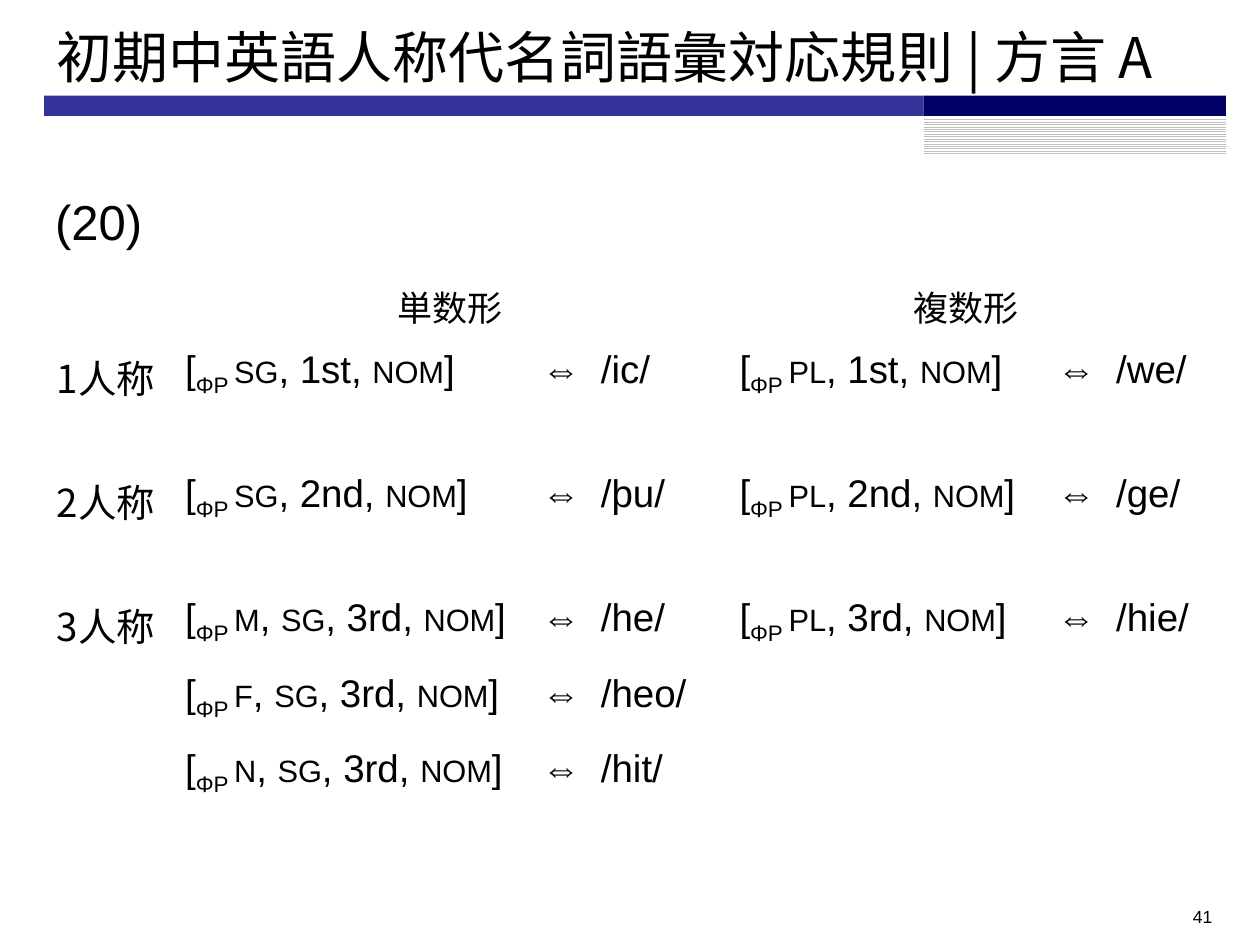
from pptx import Presentation
from pptx.dml.color import RGBColor
from pptx.enum.dml import MSO_PATTERN
from pptx.enum.shapes import MSO_SHAPE as Shape
from pptx.enum.text import MSO_ANCHOR as Anchor, MSO_AUTO_SIZE as AutoSize, PP_ALIGN as Align
from pptx.oxml.ns import qn
from pptx.util import Inches, Pt

LATIN, JAPANESE = "Arial", "Noto Sans CJK JP"
COLUMN_WIDTHS = [1.02, 2.83, 0.47, 1.1, 2.52, 0.47, 0.8]
ROW_HEIGHTS = [0.54, 0.69, 0.6, 0.6, 0.6, 0.6]
NUMBER_HEADINGS = {1: "単数形", 4: "複数形"}
PERSON_HEADINGS = {1: "1人称", 2: "2人称", 3: "3人称"}
RULES = {
    1: [
        (["sg", "1st", "nom"], "/ic/"),
        (["sg", "2nd", "nom"], "/þu/"),
        (["m", "sg", "3rd", "nom"], "/he/"),
        (["f", "sg", "3rd", "nom"], "/heo/"),
        (["n", "sg", "3rd", "nom"], "/hit/"),
    ],
    4: [
        (["pl", "1st", "nom"], "/we/"),
        (["pl", "2nd", "nom"], "/ge/"),
        (["pl", "3rd", "nom"], "/hie/"),
    ],
}


def color(value):
    return RGBColor.from_string(value)


def write(frame, text, size=22, font=LATIN, align=Align.LEFT, small_caps=False, baseline=0):
    paragraph = frame.paragraphs[0]
    paragraph.alignment = align
    run = paragraph.add_run()
    run.text = text
    run.font.size = Pt(size)
    run.font.name = font
    run.font.color.rgb = color("000000")
    properties = run.font._element
    east_asian = properties.makeelement(qn("a:ea"), {"typeface": font})
    properties.find(qn("a:latin")).addnext(east_asian)
    if small_caps:
        properties.set("cap", "small")
    if baseline:
        properties.set("baseline", str(baseline * 1000))


def write_features(frame, features):
    write(frame, "[")
    write(frame, "ΦP ", baseline=-25)
    for index, feature in enumerate(features):
        if index:
            write(frame, ", ")
        write(frame, feature, small_caps=feature.isalpha())
    write(frame, "]")


def add_bar(slide, left, top, width, height, fill):
    bar = slide.shapes.add_shape(
        Shape.RECTANGLE, Inches(left), Inches(top), Inches(width), Inches(height))
    bar.shadow.inherit = False
    bar.line.fill.background()
    bar.fill.solid()
    bar.fill.fore_color.rgb = color(fill)
    return bar


def add_title_bars(slide, left, top, width, height):
    accent_width = 2.4
    accent_left = left + width - accent_width
    add_bar(slide, left, top, width - accent_width, height, "333399")
    stripes = add_bar(slide, accent_left, top + 0.17, accent_width, 0.3, "FFFFFF")
    stripes.fill.patterned()
    stripes.fill.pattern = MSO_PATTERN.LIGHT_HORIZONTAL
    stripes.fill.fore_color.rgb = color("C0C0C0")
    stripes.fill.back_color.rgb = color("FFFFFF")
    add_bar(slide, accent_left, top, accent_width, height, "000066")


def place_title(slide, text, left, top, width, height):
    title = slide.shapes.title
    title.left, title.top = Inches(left), Inches(top)
    title.width, title.height = Inches(width), Inches(height)
    title.text_frame.auto_size = AutoSize.NONE
    title.text_frame.vertical_anchor = Anchor.MIDDLE
    write(title.text_frame, text, size=32, font=JAPANESE)


def add_label(slide, text, left, top, width, height, **text_format):
    label = slide.shapes.add_textbox(Inches(left), Inches(top), Inches(width), Inches(height))
    label.text_frame.word_wrap = True
    write(label.text_frame, text, **text_format)


def add_rule_table(slide, left, top, width, height):
    table = slide.shapes.add_table(
        len(ROW_HEIGHTS), len(COLUMN_WIDTHS),
        Inches(left), Inches(top), Inches(width), Inches(height)).table
    table.first_row = table.horz_banding = False
    for column, column_width in zip(table.columns, COLUMN_WIDTHS):
        column.width = Inches(column_width)
    for row, row_height in zip(table.rows, ROW_HEIGHTS):
        row.height = Inches(row_height)
    for cell in table.iter_cells():
        cell.fill.background()

    for column, heading in NUMBER_HEADINGS.items():
        table.cell(0, column).merge(table.cell(0, column + 2))
        write(table.cell(0, column).text_frame, heading,
              size=20, font=JAPANESE, align=Align.CENTER)
    for column in (0, 4, 5, 6):
        table.cell(3, column).merge(table.cell(5, column))
    for row, heading in PERSON_HEADINGS.items():
        write(table.cell(row, 0).text_frame, heading, font=JAPANESE)
    for column, rules in RULES.items():
        for row, (features, form) in enumerate(rules, start=1):
            write_features(table.cell(row, column).text_frame, features)
            write(table.cell(row, column + 1).text_frame, "⇔")
            write(table.cell(row, column + 2).text_frame, form)


def main():
    presentation = Presentation()
    presentation.slide_width, presentation.slide_height = Inches(10), Inches(7.5)
    slide = presentation.slides.add_slide(presentation.slide_layouts[5])
    add_title_bars(slide, 0.35, 0.76, 9.38, 0.16)
    place_title(slide, "初期中英語人称代名詞語彙対応規則 | 方言 A", 0.35, 0.13, 9.38, 0.63)
    add_rule_table(slide, 0.35, 2.18, sum(COLUMN_WIDTHS), sum(ROW_HEIGHTS))
    add_label(slide, "41", 7.39, 7.14, 2.33, 0.29, size=10, align=Align.RIGHT)
    add_label(slide, "(20)", 0.34, 1.47, 0.94, 0.57, size=28)
    presentation.save("out.pptx")


if __name__ == "__main__":
    main()
